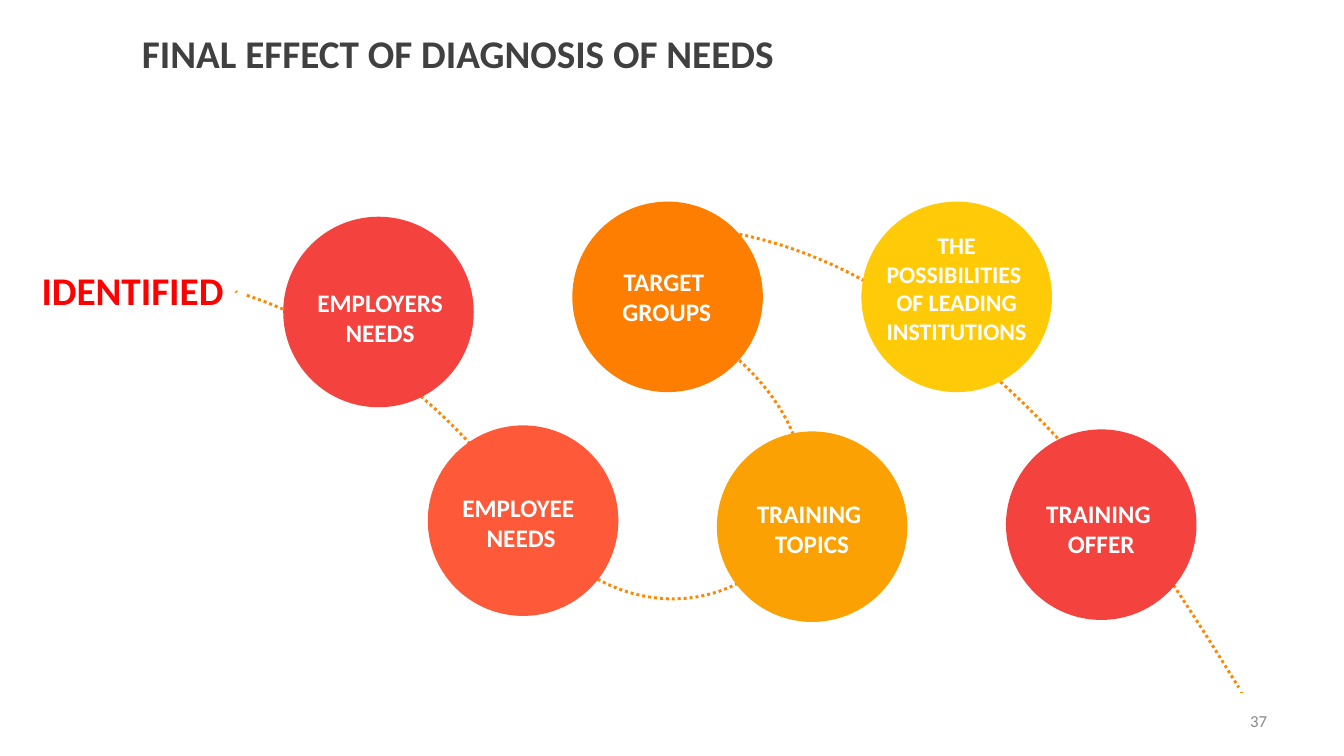
"""Build the slide on the final effect of the diagnosis of needs."""
from lxml.etree import SubElement
from pptx import Presentation
from pptx.dml.color import RGBColor
from pptx.enum.dml import MSO_LINE
from pptx.enum.shapes import MSO_SHAPE
from pptx.enum.text import MSO_ANCHOR, PP_ALIGN
from pptx.oxml.ns import qn
from pptx.util import Pt

PX = 9144
SLIDE_SIZE = (1333.33, 750)
FONT = "Calibri"
WHITE, TRAIL_COLOR = "FFFFFF", "FF8803"

TITLE = "FINAL EFFECT OF DIAGNOSIS OF NEEDS"
START = "IDENTIFIED"
PAGE_NUMBER = "37"

CIRCLE_SIZE, FIRST_LEFT, CIRCLE_PITCH = 189, 281, 143.4
STEPS = [
    {"top": 215, "fill": "F4433E", "text": "EMPLOYERS NEEDS",
     "box": (291, 280, 172, 71), "wrap": True},
    {"top": 422, "fill": "FE5938", "text": "EMPLOYEE \nNEEDS",
     "box": (448, 483, 138, 71)},
    {"top": 200, "fill": "FE7E01", "text": "TARGET \nGROUPS",
     "box": (607, 259, 109, 71)},
    {"top": 428, "fill": "FBA103", "text": "TRAINING \nTOPICS",
     "box": (740, 489, 131, 71)},
    {"top": 200, "fill": "FFCA08", "text": "THE POSSIBILITIES \nOF LEADING INSTITUTIONS",
     "box": (863, 224, 172, 125), "wrap": True, "size": 17},
    {"top": 426, "fill": "F4433E", "text": "TRAINING \vOFFER",
     "box": (1027, 489, 131, 71)},
]

TRAILS = [
    {"box": (232, 287, 5, 4),
     "points": [(234, 289), (234, 289), (235, 289), (235, 290)]},
    {"box": (243, 225, 987, 459),
     "points": [(245, 293), (314, 316), (427, 374), (522, 509),
                (669, 718), (952, 498), (688, 322),
                (517, 208), (732, 190), (894, 301),
                (1074, 424), (1165, 580), (1229, 682)]},
    {"box": (1230, 685, 5, 5),
     "points": [(1232, 687), (1232, 687), (1232, 688), (1232, 688)]},
]


def emu(*lengths):
    """Turn px lengths into EMU."""
    return [round(length * PX) for length in lengths]


def color(value):
    """Turn a hex string into a colour."""
    return RGBColor.from_string(value)


def add_text(slide, text, box, *, size=18, fill=WHITE, bold=True,
             align=PP_ALIGN.CENTER, anchor=MSO_ANCHOR.TOP, wrap=False):
    """Add a text box in one format."""
    frame = slide.shapes.add_textbox(*emu(*box)).text_frame
    frame.word_wrap = wrap
    frame.vertical_anchor = anchor
    frame.text = text
    for paragraph in frame.paragraphs:
        paragraph.alignment = align
        for run in paragraph.runs:
            font = run.font
            font.name, font.size, font.bold = FONT, Pt(size), bold
            font.color.rgb = color(fill)


def add_trail(slide, box, points):
    """Draw one dotted trail of joined cubic curves inside its box."""
    left, top, width, height = box
    builder = slide.shapes.build_freeform(*emu(left, top), scale=1)
    builder.add_line_segments([emu(left + width, top + height)], close=False)
    trail = builder.convert_to_shape()
    outline = next(trail.element.iter(qn("a:path")))
    for command in list(outline):
        outline.remove(command)
    groups = [("a:moveTo", points[:1])]
    groups += [("a:cubicBezTo", points[first:first + 3])
               for first in range(1, len(points), 3)]
    for tag, group in groups:
        command = SubElement(outline, qn(tag))
        for point_x, point_y in group:
            x, y = emu(point_x - left, point_y - top)
            SubElement(command, qn("a:pt"), x=str(x), y=str(y))
    trail.shadow.inherit = False
    trail.fill.background()
    trail.line.color.rgb = color(TRAIL_COLOR)
    trail.line.width = Pt(2.13)
    trail.line.dash_style = MSO_LINE.ROUND_DOT


def add_circle(slide, left, top, fill):
    """Draw one step circle."""
    circle = slide.shapes.add_shape(
        MSO_SHAPE.FLOWCHART_CONNECTOR, *emu(left, top, CIRCLE_SIZE, CIRCLE_SIZE))
    circle.shadow.inherit = False
    circle.fill.solid()
    circle.fill.fore_color.rgb = color(fill)
    circle.line.fill.background()


def main():
    """Build and save the presentation."""
    presentation = Presentation()
    presentation.slide_width, presentation.slide_height = emu(*SLIDE_SIZE)
    slide = presentation.slides.add_slide(presentation.slide_layouts[6])

    add_text(slide, TITLE, (131, 21, 788, 62), size=28, fill="404040",
             align=PP_ALIGN.LEFT, anchor=MSO_ANCHOR.MIDDLE, wrap=True)
    add_text(slide, PAGE_NUMBER, (956, 695, 311, 40), size=12, fill="898989",
             bold=False, align=PP_ALIGN.RIGHT, anchor=MSO_ANCHOR.MIDDLE, wrap=True)
    for trail in TRAILS:
        add_trail(slide, trail["box"], trail["points"])
    for index, step in enumerate(STEPS):
        add_circle(slide, FIRST_LEFT + index * CIRCLE_PITCH, step["top"], step["fill"])
    for step in STEPS:
        add_text(slide, step["text"], step["box"],
                 size=step.get("size", 18), wrap=step.get("wrap", False))
    add_text(slide, START, (30, 259, 203, 57), size=28, fill="FF0000")

    presentation.save("out.pptx")


if __name__ == "__main__":
    main()
